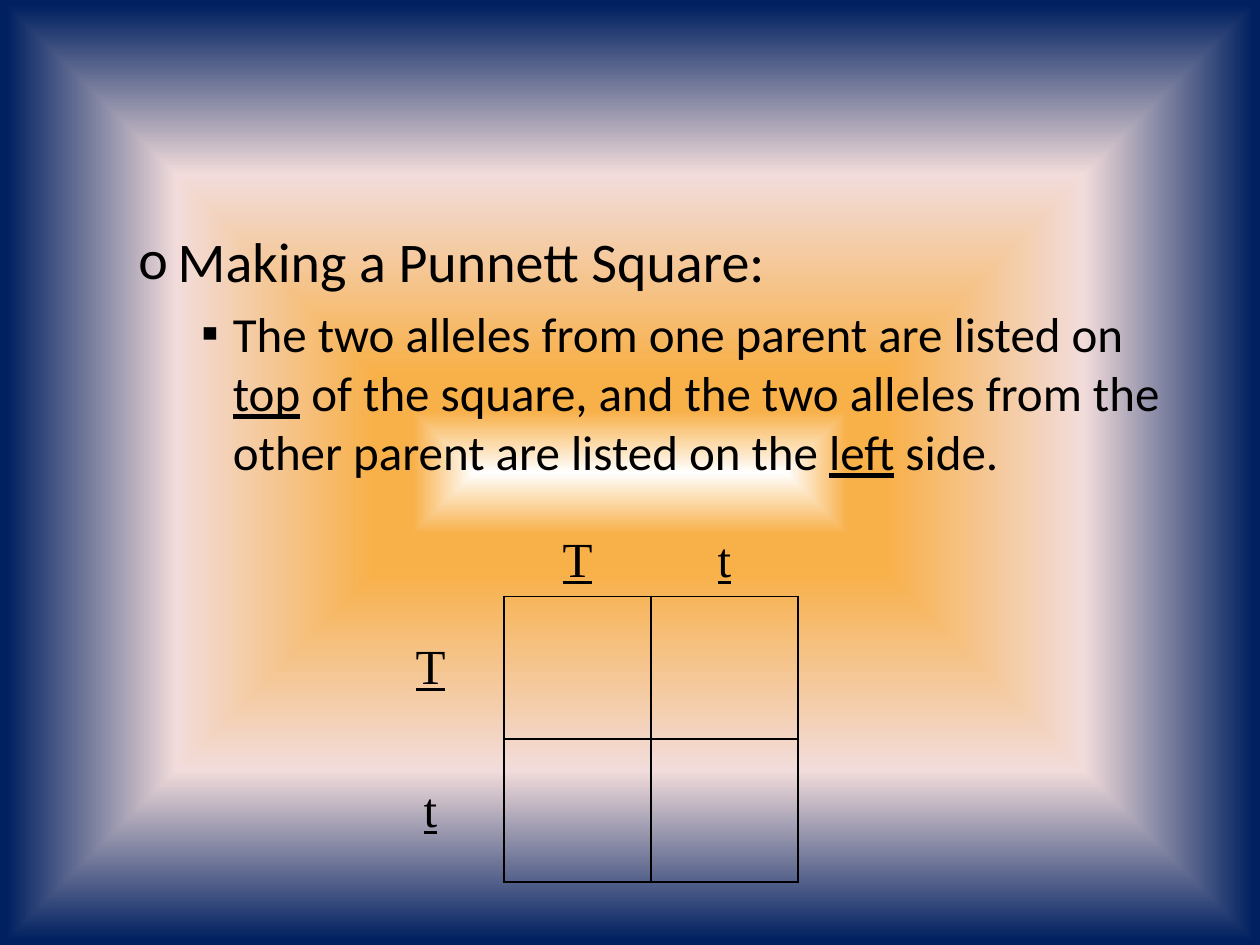
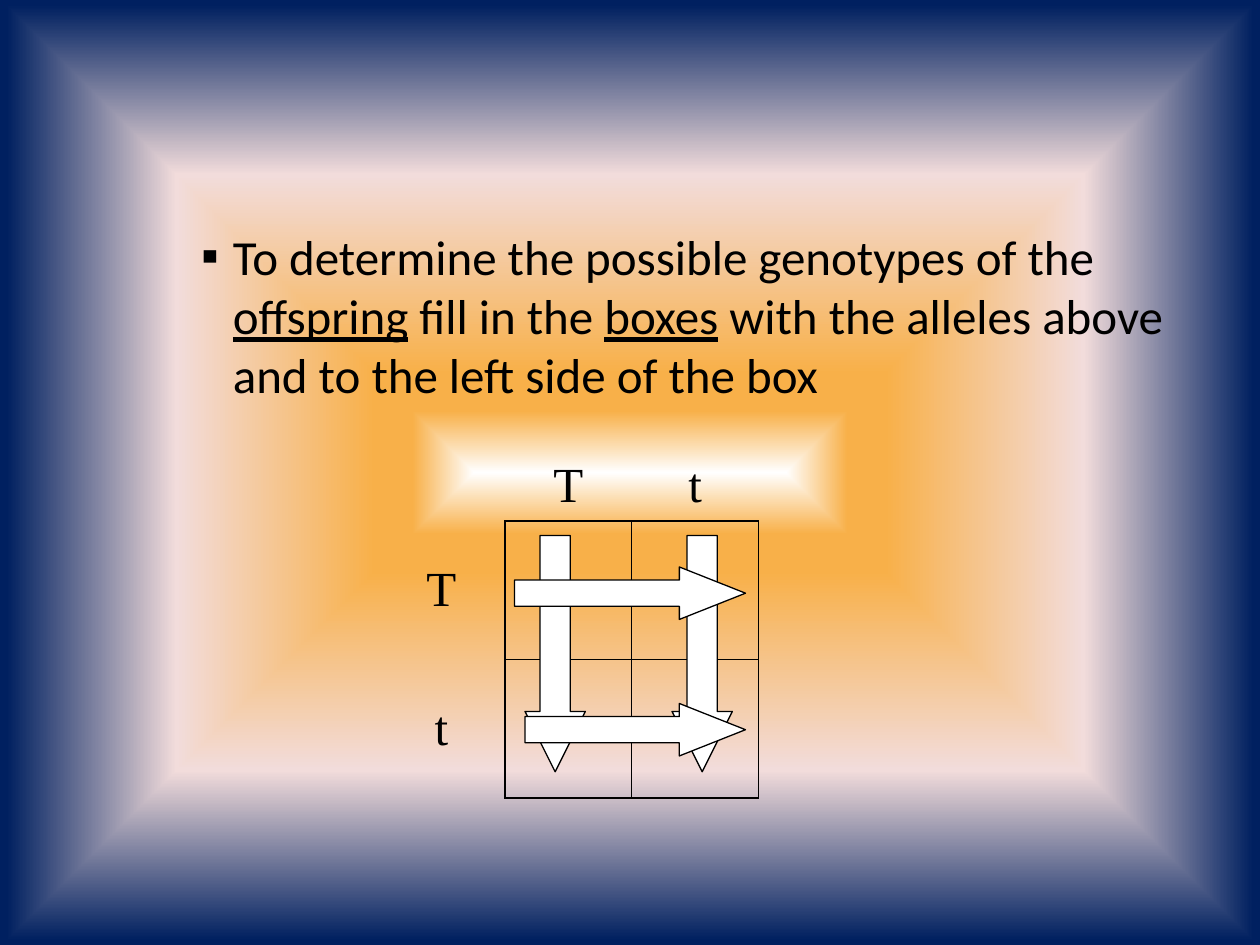
from dataclasses import dataclass

from lxml import etree
from pptx import Presentation
from pptx import util as u
from pptx.dml.color import RGBColor
from pptx.enum import shapes, text
from pptx.oxml import ns

Pt = u.Pt


@dataclass(frozen=True)
class Theme:
    ink: str = "000000"
    paper: str = "FFFFFF"
    glow: tuple = ((0, "FFFFFF", 100), (13, "F8B049", 100), (21, "F8B049", 100),
                   (63, "F2DCDB", 100), (99, "002060", 82))
    body_font: str = "Calibri"
    allele_font: str = "Times New Roman"
    heading_size: int = 32
    body_size: int = 28
    allele_size: int = 28
    grid_line: float = 1
    arrow_line: float = 0.75


def add_element(parent, tag, **attributes):
    values = {name: str(value) for name, value in attributes.items()}
    return etree.SubElement(parent, ns.qn(tag), values)


class PunnettDeck:
    """Builds slides about Punnett squares in one shared style."""

    def __init__(self, theme):
        self.theme = theme
        self.deck = Presentation()
        self.deck.slide_width, self.deck.slide_height = Pt(720), Pt(540)
        self.slide = None

    def add_slide(self):
        self.slide = self.deck.slides.add_slide(self.deck.slide_layouts[6])
        fill = self.slide.background.fill
        fill.gradient()
        gradient = self.slide.element.find(".//" + ns.qn("a:gradFill"))
        for child in list(gradient):
            gradient.remove(child)
        stops = add_element(gradient, "a:gsLst")
        for position, color, opacity in self.theme.glow:
            stop = add_element(stops, "a:gs", pos=position * 1000)
            tint = add_element(stop, "a:srgbClr", val=color)
            if opacity < 100:
                add_element(tint, "a:alpha", val=opacity * 1000)
        center = add_element(gradient, "a:path", path="rect")
        add_element(center, "a:fillToRect", l=50000, t=50000, r=50000, b=50000)

    def add_span(self, para, wording, font, size, underline=False):
        span = para.add_run()
        span.text = wording
        span.font.name = font
        span.font.size = Pt(size)
        span.font.underline = underline
        span.font.color.rgb = RGBColor.from_string(self.theme.ink)

    def add_body(self):
        box = self.slide.shapes.add_textbox(Pt(36), Pt(126), Pt(648), Pt(356.4))
        box.text_frame.word_wrap = True
        return box.text_frame

    def add_bullet(self, frame, spans, heading=False):
        if heading:
            size, symbol, margin, hanging = self.theme.heading_size, "o", 58.5, 22.5
        else:
            size, symbol, margin, hanging = self.theme.body_size, "▪", 90, 18
        first = frame.paragraphs[0]
        para = frame.add_paragraph() if first.runs else first
        para.space_before = Pt(size * 0.2)
        properties = para._p.get_or_add_pPr()
        properties.set("marL", str(Pt(margin)))
        properties.set("indent", str(-Pt(hanging)))
        add_element(properties, "a:buFont", typeface=self.theme.body_font)
        add_element(properties, "a:buChar", char=symbol)
        for wording, underline in spans:
            self.add_span(para, wording, self.theme.body_font, size, underline)

    def add_borders(self, cell, sides):
        properties = cell._tc.get_or_add_tcPr()
        for side in "LRTB":
            border = add_element(properties, f"a:ln{side}", w=Pt(self.theme.grid_line))
            if side in sides:
                fill = add_element(border, "a:solidFill")
                add_element(fill, "a:srgbClr", val=self.theme.ink)
            else:
                add_element(border, "a:noFill")

    def add_square(self, left, top, column_width, row_height, alleles, underline=False):
        header_height = row_height / 2
        frame = self.slide.shapes.add_table(
            3, 3, Pt(left), Pt(top), Pt(3 * column_width), Pt(header_height + 2 * row_height))
        table = frame.table
        table.first_row = table.horz_banding = False
        labels = ("", *alleles)
        for i in range(3):
            table.columns[i].width = Pt(column_width)
            table.rows[i].height = Pt(row_height if i else header_height)
            for j in range(3):
                cell = table.cell(i, j)
                inside = i and j
                self.add_borders(cell, "LRTB" if inside else "B" if j else "R" if i else "")
                cell.fill.background()
                if not inside and labels[i + j]:
                    self.add_allele(cell, labels[i + j], underline)

    def add_allele(self, cell, allele, underline):
        cell.vertical_anchor = text.MSO_ANCHOR.MIDDLE
        cell.margin_left = cell.margin_right = Pt(5)
        cell.margin_top = cell.margin_bottom = 0
        para = cell.text_frame.paragraphs[0]
        para.alignment = text.PP_ALIGN.CENTER
        self.add_span(para, allele, self.theme.allele_font, self.theme.allele_size, underline)

    def add_arrow(self, kind, left, top, width, height, head):
        arrow = self.slide.shapes.add_shape(kind, Pt(left), Pt(top), Pt(width), Pt(height))
        arrow.adjustments[0] = 0.5
        arrow.adjustments[1] = head
        arrow.shadow.inherit = False
        arrow.fill.solid()
        arrow.fill.fore_color.rgb = RGBColor.from_string(self.theme.paper)
        arrow.line.color.rgb = RGBColor.from_string(self.theme.ink)
        arrow.line.width = Pt(self.theme.arrow_line)


def main():
    show = PunnettDeck(Theme())
    alleles = ("T", "t")

    show.add_slide()
    body = show.add_body()
    show.add_bullet(body, [("Making a Punnett Square:", False)], heading=True)
    show.add_bullet(body, [
        ("The two alleles from one parent are listed on ", False),
        ("top", True),
        (" of the square, and the two alleles from the other parent are listed on the ", False),
        ("left", True),
        (" side.", False),
    ])
    show.add_square(204, 300, 84, 81.6, alleles, underline=True)

    show.add_slide()
    show.add_bullet(show.add_body(), [
        ("To determine the possible genotypes of the ", False),
        ("offspring", True),
        (" fill in the ", False),
        ("boxes", True),
        (" with the alleles above and to the left side of the box", False),
    ])
    show.add_square(216, 258, 72.5, 79.2, alleles)
    for left in (384, 300):
        show.add_arrow(shapes.MSO_SHAPE.DOWN_ARROW, left, 306, 34.5, 135, head=1)
    for left, top, width in ((294, 324, 132), (300, 402, 126)):
        show.add_arrow(shapes.MSO_SHAPE.RIGHT_ARROW, left, top, width, 30, head=1.26)

    show.deck.save("out.pptx")


if __name__ == "__main__":
    main()
